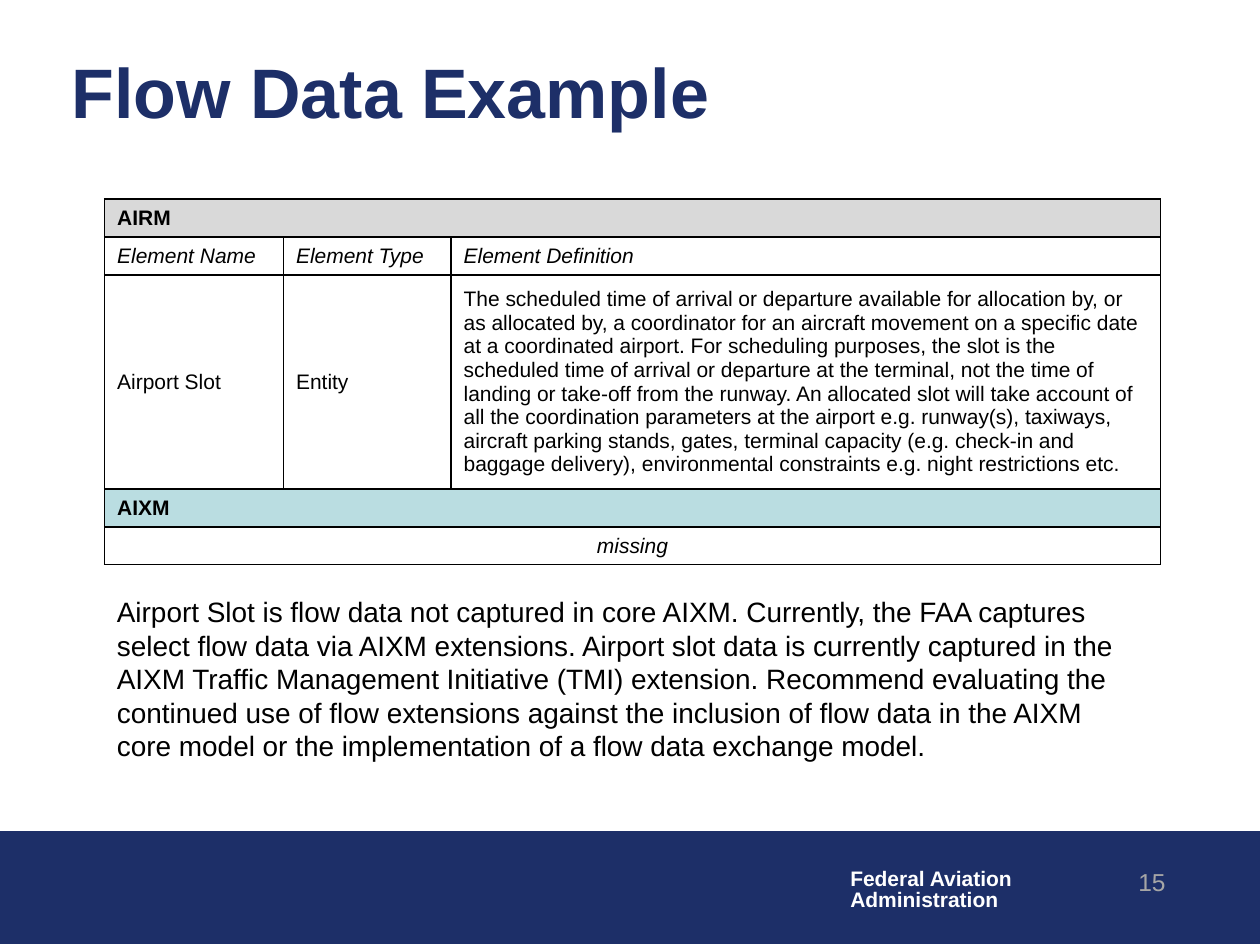
from dataclasses import dataclass

import pptx
import pptx.dml.color
import pptx.enum.shapes
import pptx.enum.text
import pptx.oxml
import pptx.oxml.ns
import pptx.util

Inches = pptx.util.Inches
Pt = pptx.util.Pt
RGBColor = pptx.dml.color.RGBColor
Align = pptx.enum.text.PP_ALIGN
Anchor = pptx.enum.text.MSO_ANCHOR

NAVY = RGBColor(0x1D, 0x2F, 0x68)
BLACK = RGBColor(0, 0, 0)
WHITE = RGBColor(0xFF, 0xFF, 0xFF)
PAGE_GRAY = RGBColor(0xA6, 0xA6, 0xA6)
AIRM_GRAY = RGBColor(0xD9, 0xD9, 0xD9)
AIXM_TEAL = RGBColor(0xBA, 0xDD, 0xE1)

DEFINITION = (
    "The scheduled time of arrival or departure available for allocation by, or as "
    "allocated by, a coordinator for an aircraft movement on a specific date at a "
    "coordinated airport. For scheduling purposes, the slot is the scheduled time of "
    "arrival or departure at the terminal, not the time of landing or take-off from the "
    "runway. An allocated slot will take account of all the coordination parameters at "
    "the airport e.g. runway(s), taxiways, aircraft parking stands, gates, terminal "
    "capacity (e.g. check-in and baggage delivery), environmental constraints e.g. "
    "night restrictions etc."
)
RECOMMENDATION = (
    "Airport Slot is flow data not captured in core AIXM. Currently, the FAA captures "
    "select flow data via AIXM extensions. Airport slot data is currently captured in "
    "the AIXM Traffic Management Initiative (TMI) extension. Recommend evaluating the "
    "continued use of flow extensions against the inclusion of flow data in the AIXM "
    "core model or the implementation of a flow data exchange model."
)


@dataclass(frozen=True)
class ModelRow:
    """One table row; a single text spans every column."""
    texts: tuple[str, ...]
    height: float = 0.29
    fill: RGBColor = WHITE
    bold: bool = False
    italic: bool = False
    align: Align = Align.LEFT


MODEL_ROWS = (
    ModelRow(("AIRM",), fill=AIRM_GRAY, bold=True),
    ModelRow(("Element Name", "Element Type", "Element Definition"), italic=True),
    ModelRow(("Airport Slot", "Entity", DEFINITION), height=1.59),
    ModelRow(("AIXM",), fill=AIXM_TEAL, bold=True),
    ModelRow(("missing",), italic=True, align=Align.CENTER),
)
COLUMN_WIDTHS = (1.42, 1.33, 5.63)


def write(frame, text: str, *, size: float, color: RGBColor = BLACK, bold: bool = False,
          italic: bool = False, align: Align = Align.LEFT, spacing: float = 1.0,
          wrap: bool = True) -> None:
    """Fill a text frame, one paragraph for each line of text."""
    frame.word_wrap = wrap
    frame.text = text
    for paragraph in frame.paragraphs:
        paragraph.alignment = align
        paragraph.line_spacing = spacing
        font = paragraph.font
        font.name, font.size = "Arial", Pt(size)
        font.bold, font.italic = bold, italic
        font.color.rgb = color


def add_text(slide, box: tuple[float, ...], text: str, **style) -> None:
    textbox = slide.shapes.add_textbox(*map(Inches, box))
    write(textbox.text_frame, text, **style)


def outline_cell(cell) -> None:
    """Draw a 1 pt black border on all four sides, ahead of the cell fill."""
    properties = cell._tc.get_or_add_tcPr()
    for position, side in enumerate(("lnL", "lnR", "lnT", "lnB")):
        properties.insert(position, pptx.oxml.parse_xml(
            f'<a:{side} {pptx.oxml.ns.nsdecls("a")} w="{Pt(1)}">'
            f'<a:solidFill><a:srgbClr val="{BLACK}"/></a:solidFill></a:{side}>'))


def add_model_table(slide, left: float, top: float, rows: tuple[ModelRow, ...]) -> None:
    table = slide.shapes.add_table(
        len(rows), len(COLUMN_WIDTHS), Inches(left), Inches(top),
        Inches(sum(COLUMN_WIDTHS)), Inches(sum(row.height for row in rows))).table
    table.first_row = table.horz_banding = False
    for column, width in zip(table.columns, COLUMN_WIDTHS):
        column.width = Inches(width)
    last = len(COLUMN_WIDTHS) - 1
    for index, row in enumerate(rows):
        table.rows[index].height = Inches(row.height)
        for column in range(last + 1):
            cell = table.cell(index, column)
            cell.fill.solid()
            cell.fill.fore_color.rgb = row.fill
            cell.vertical_anchor = Anchor.MIDDLE
            outline_cell(cell)
            text = row.texts[column] if column < len(row.texts) else ""
            write(cell.text_frame, text, size=12, bold=row.bold,
                  italic=row.italic, align=row.align)
        if len(row.texts) == 1:
            table.cell(index, 0).merge(table.cell(index, last))


def add_footer(slide) -> None:
    band = slide.shapes.add_shape(
        pptx.enum.shapes.MSO_SHAPE.RECTANGLE,
        Inches(0), Inches(6.6), Inches(10), Inches(0.89))
    band.shadow.inherit = False
    band.fill.solid()
    band.fill.fore_color.rgb = NAVY
    band.line.color.rgb = NAVY
    band.line.width = Pt(0.75)
    add_text(slide, (6.65, 6.85, 1.5, 0.44), "Federal Aviation\nAdministration",
             size=12, color=WHITE, bold=True, spacing=0.85, wrap=False)
    add_text(slide, (8.15, 6.83, 1.2, 0.5), "15",
             size=14, color=PAGE_GRAY, align=Align.RIGHT)


def main() -> None:
    presentation = pptx.Presentation()
    presentation.slide_width, presentation.slide_height = Inches(10), Inches(7.5)
    slide = presentation.slides.add_slide(presentation.slide_layouts[5])

    # Footer band, agency and page number
    add_footer(slide)

    # Title
    title = slide.shapes.title
    title.left, title.top = Inches(0.47), Inches(0.38)
    title.width, title.height = Inches(9.27), Inches(0.67)
    title.text_frame.auto_size = pptx.enum.text.MSO_AUTO_SIZE.NONE
    title.text_frame.vertical_anchor = Anchor.MIDDLE
    write(title.text_frame, "Flow Data Example", size=40, color=NAVY, bold=True)

    # Model comparison and recommendation
    add_model_table(slide, 0.83, 1.58, MODEL_ROWS)
    add_text(slide, (0.83, 4.67, 8.33, 2.08), RECOMMENDATION, size=16)

    presentation.save("out.pptx")


if __name__ == "__main__":
    main()
